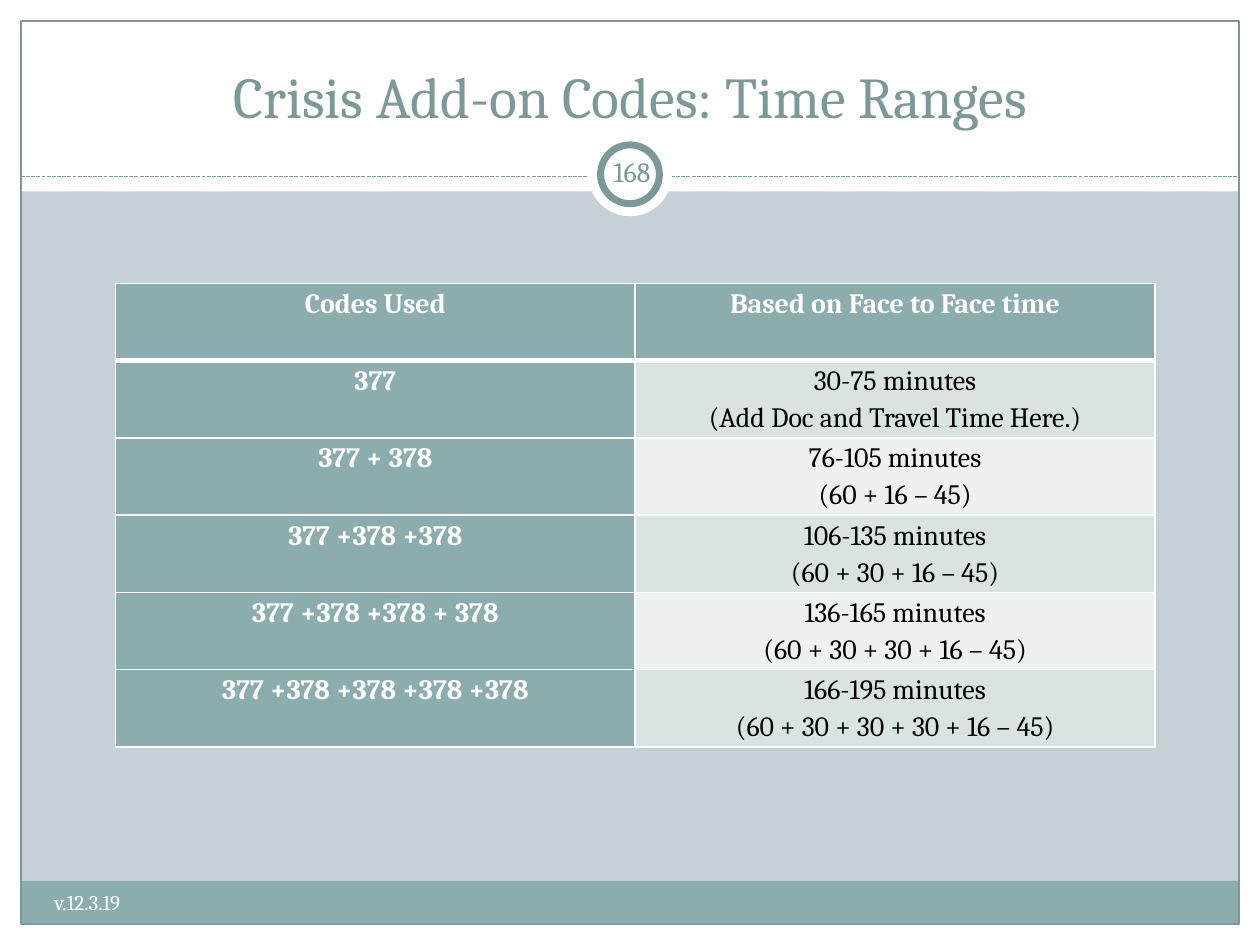
from lxml import etree
from pptx import Presentation
from pptx.dml.color import RGBColor
from pptx.enum.dml import MSO_LINE
from pptx.enum.shapes import MSO_CONNECTOR, MSO_SHAPE
from pptx.enum.text import MSO_ANCHOR, PP_ALIGN
from pptx.oxml.ns import qn
from pptx.util import Inches, Pt

RECT, OVAL = MSO_SHAPE.RECTANGLE, MSO_SHAPE.OVAL
STRAIGHT, DASH = MSO_CONNECTOR.STRAIGHT, MSO_LINE.SQUARE_DOT
TOP, MIDDLE, BOTTOM = MSO_ANCHOR.TOP, MSO_ANCHOR.MIDDLE, MSO_ANCHOR.BOTTOM
LEFT, CENTER = PP_ALIGN.LEFT, PP_ALIGN.CENTER

FONT = "Cambria"
COLS, ROWS = 60, 45
COLORS = {
    "back": "C5D1D7", "white": "FFFFFF", "black": "000000", "teal": "8CADAE",
    "dark": "7C999A", "odd": "DAE3E3", "even": "EEF1F2",
}
CODES = [
    ("Codes Used", "Based on Face to Face time"),
    ("377", "30-75 minutes\n(Add Doc and Travel Time Here.)"),
    ("377 + 378", "76-105 minutes\n(60 + 16 – 45)"),
    ("377 +378 +378", "106-135 minutes\n(60 + 30 + 16 – 45)"),
    ("377 +378 +378 + 378", "136-165 minutes\n(60 + 30 + 30 + 16 – 45)"),
    ("377 +378 +378 +378 +378",
     "166-195 minutes\n(60 + 30 + 30 + 30 + 16 – 45)"),
]


def tint(name):
    return RGBColor.from_string(COLORS[name])


def apply(item, values):
    for name, value in values.items():
        setattr(item, name, value)


class Page:
    """Draws on one slide, with lengths in columns and rows of its grid."""

    def __init__(self, deck):
        self.slide = deck.slides.add_slide(deck.slide_layouts[6])
        self.shapes = self.slide.shapes
        self.col = deck.slide_width / COLS
        self.row = deck.slide_height / ROWS
        fill = self.slide.background.fill
        fill.solid()
        fill.fore_color.rgb = tint("back")

    def place(self, x, y, w, h):
        return (round(x * self.col), round(y * self.row),
                round(w * self.col), round(h * self.row))

    def shape(self, kind, box, fill=None, line=None, width=0.75):
        shape = self.shapes.add_shape(kind, *self.place(*box))
        shape.shadow.inherit = False
        for part, color in ((shape.fill, fill), (shape.line.fill, line)):
            if color:
                part.solid()
                part.fore_color.rgb = tint(color)
            else:
                part.background()
        if line:
            shape.line.width = Pt(width)

    def rule(self, x, y, end):
        line = self.shapes.add_connector(
            STRAIGHT, *self.place(x, y, end, y))
        etree.SubElement(line._element.spPr, qn("a:effectLst"))
        line.line.color.rgb = tint("dark")
        apply(line.line, {"width": Pt(0.75), "dash_style": DASH})

    def label(self, frame, text, size, color, align=CENTER, bold=False,
              space=None):
        frame.word_wrap = True
        frame.text = text
        for para in frame.paragraphs:
            apply(para, {"alignment": align, "line_spacing": space})
            for run in para.runs:
                apply(run.font, {"name": FONT, "size": Pt(size), "bold": bold})
                run.font.color.rgb = tint(color)

    def text(self, box, text, size, color, align=CENTER, anchor=TOP,
             inset=None):
        frame = self.shapes.add_textbox(*self.place(*box)).text_frame
        frame.vertical_anchor = anchor
        if inset is not None:
            sides = ("left", "top", "right", "bottom")
            apply(frame, {f"margin_{side}": Inches(inset) for side in sides})
        self.label(frame, text, size, color, align)

    def edge(self, cell, sides):
        """Puts white borders on a cell, given widths by side."""
        props = cell._tc.get_or_add_tcPr()
        for spot, (side, width) in enumerate(sides.items()):
            line = etree.Element(qn(f"a:ln{side}"), w=str(Pt(width)))
            fill = etree.SubElement(line, qn("a:solidFill"))
            etree.SubElement(fill, qn("a:srgbClr"), val=COLORS["white"])
            props.insert(spot, line)

    def table(self, box, data):
        table = self.shapes.add_table(
            len(data), len(data[0]), *self.place(*box)).table
        for r, line in enumerate(data):
            for c, text in enumerate(line):
                cell = table.cell(r, c)
                head = r == 0 or c == 0
                band = "odd" if r % 2 else "even"
                apply(cell, {"margin_left": Inches(0.07), "margin_top": 0,
                             "margin_right": Inches(0.07), "margin_bottom": 0})
                cell.fill.solid()
                cell.fill.fore_color.rgb = tint("teal" if head else band)
                self.label(cell.text_frame, text, 16,
                           "white" if head else "black", bold=head, space=1.15)
                self.edge(cell, {"L": 1, "R": 1, "T": 3 if r == 1 else 1,
                                 "B": 3 if r == 0 else 1})


def main():
    deck = Presentation()
    apply(deck, {"slide_width": Inches(10), "slide_height": Inches(7.5)})
    page = Page(deck)

    margins = [(0, 44, 60, 1), (0, 0, 60, 9.12), (0, 0, 1, 45), (59, 0, 1, 45)]
    for box in margins:
        page.shape(RECT, box, "white")
    page.shape(RECT, (1, 41.95, 58, 2.05), "teal")
    page.shape(RECT, (1, 1, 58, 43), line="dark")
    page.rule(1, 8.4, 59)
    page.shape(OVAL, (28, 6.3, 4, 4), "white")
    page.shape(OVAL, (28.6, 6.9, 2.8, 2.8), "white", "dark", 4)

    page.text((2, 1.5, 56, 5), "Crisis Add-on Codes: Time Ranges", 33, "dark",
              anchor=BOTTOM)
    page.text((28.6, 6.7, 3, 2.9), "168", 16, "dark", anchor=MIDDLE,
              inset=0.05)
    page.table((5.5, 13.5, 49.5, 22.05), CODES)
    page.text((2, 42.05, 23.5, 2.4), "v.12.3.19", 12, "white", LEFT)

    deck.save("out.pptx")


if __name__ == "__main__":
    main()
